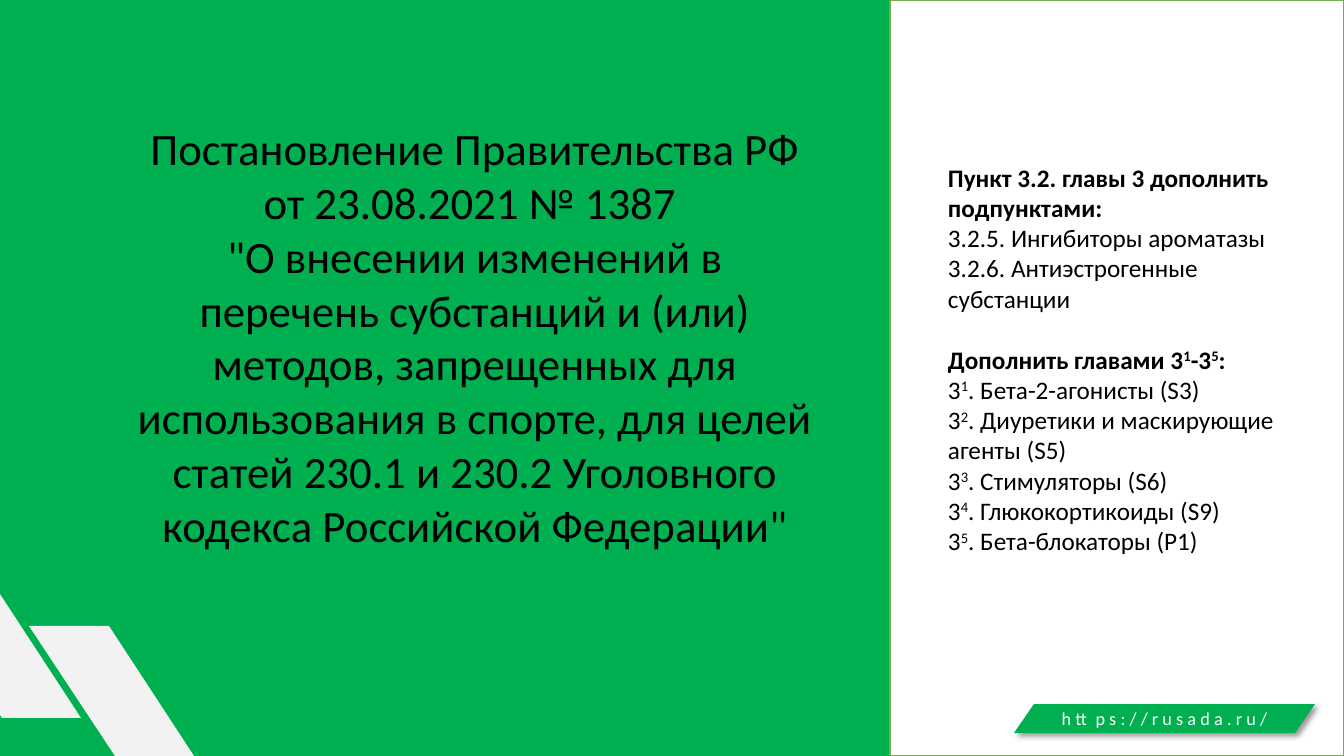
from pptx import Presentation
from pptx.dml.color import RGBColor
from pptx.enum.shapes import MSO_SHAPE as Shape
from pptx.enum.text import MSO_ANCHOR as Anchor, MSO_AUTO_SIZE as Fit, PP_ALIGN as Align
from pptx.oxml import parse_xml
from pptx.oxml.ns import nsdecls
from pptx.util import Pt

# Content: ^ switches superscript on and off
TITLE = [
    "Постановление Правительства РФ от 23.08.2021 № 1387 ",
    '"О внесении изменений в перечень субстанций и (или) методов, запрещенных для '
    'использования в спорте, для целей статей 230.1 и 230.2 Уголовного кодекса '
    'Российской Федерации"',
]
GROUPS = [
    ("Пункт 3.2. главы 3 дополнить подпунктами:", [
        "3.2.5. Ингибиторы ароматазы",
        "3.2.6. Антиэстрогенные субстанции",
    ]),
    ("Дополнить главами 3^1^-3^5^:", [
        "3^1^. Бета-2-агонисты (S3)",
        "3^2^. Диуретики и маскирующие агенты (S5)",
        "3^3^. Стимуляторы (S6)",
        "3^4^. Глюкокортикоиды (S9)",
        "3^5^. Бета-блокаторы (P1)",
    ]),
]
SITE = "https://rusada.ru/"

# Geometry in px
WIDE, HIGH = 1344, 756
TITLE_BOX = (129, 116, 692, 445)
PANEL_BOX = (890, 0, 454, 756)
LIST_BOX = (943, 157, 361, 407)
SITE_BOX = (1052, 704, 225, 28)
STRIPE = [(194, 756), (109, 626), (29, 626), (115, 756)]
SHIFTS = [(0, 0), (-113, -38)]
TAG = [(1014, 733), (1034, 704), (1315, 704), (1295, 733)]
SCALE = 914400 / 100.8

GREEN = RGBColor(0x00, 0xB0, 0x50)
EDGE = RGBColor(0x70, 0xAD, 0x47)
PALE = RGBColor(0xF2, 0xF2, 0xF2)
WHITE = RGBColor(0xFF, 0xFF, 0xFF)
BLACK = RGBColor(0, 0, 0)


def px(n):
    return round(n * SCALE)


def place(shape, box):
    for name, n in zip(("left", "top", "width", "height"), box):
        setattr(shape, name, px(n))


def setup(shape, anchor=Anchor.TOP):
    frame = shape.text_frame
    form = dict(word_wrap=True, auto_size=Fit.SHAPE_TO_FIT_TEXT, vertical_anchor=anchor)
    for side in ("left", "right", "top", "bottom"):
        form["margin_" + side] = px(5)
    for name, value in form.items():
        setattr(frame, name, value)
    return frame


def write(frame, lines, size, color=BLACK, align=Align.LEFT, space=0):
    """Fill a frame from (text, bold, gap before) lines."""
    for i, (text, bold, gap) in enumerate(lines):
        para = frame.add_paragraph() if i else frame.paragraphs[0]
        props = para._p.get_or_add_pPr()
        props.set("marL", "0")
        props.set("indent", "0")
        props.append(parse_xml(f"<a:buNone {nsdecls('a')}/>"))
        form = dict(alignment=align, space_before=Pt(gap), space_after=Pt(0), line_spacing=1.0)
        for name, value in form.items():
            setattr(para, name, value)
        for j, part in enumerate(text.split("^")):
            run = para.add_run()
            run.text = part
            for name, value in dict(name="Calibri", size=Pt(size), bold=bold).items():
                setattr(run.font, name, value)
            run.font.color.rgb = color
            marks = run._r.get_or_add_rPr()
            if j % 2:
                marks.set("baseline", "30000")
            if space:
                marks.set("spc", str(space * 100))


def paint(shape, fill, line=None):
    shape.shadow.inherit = False
    shape.fill.solid()
    shape.fill.fore_color.rgb = fill
    if line is None:
        shape.line.fill.background()
    else:
        shape.line.color.rgb = line
        shape.line.width = Pt(1)


def outline(slide, points, fill):
    form = slide.shapes.build_freeform(*points[0], scale=SCALE)
    form.add_line_segments(points[1:], close=True)
    shape = form.convert_to_shape()
    paint(shape, fill)
    return shape


def main():
    deck = Presentation()
    deck.slide_width, deck.slide_height = px(WIDE), px(HIGH)
    slide = deck.slides.add_slide(deck.slide_layouts[1])
    slide.background.fill.solid()
    slide.background.fill.fore_color.rgb = GREEN

    # Title on the green side
    title, body = slide.shapes.title, slide.placeholders[1]
    place(title, TITLE_BOX)
    write(setup(title), [(text, False, 0) for text in TITLE], 32, align=Align.CENTER)

    # Corner stripes
    for dx, dy in SHIFTS:
        outline(slide, [(x + dx, y + dy) for x, y in STRIPE], PALE)

    # White panel with the list above it
    panel = slide.shapes.add_shape(Shape.RECTANGLE, *map(px, PANEL_BOX))
    paint(panel, WHITE, EDGE)
    panel.element.addnext(body.element)
    place(body, LIST_BOX)
    lines = []
    for head, items in GROUPS:
        lines.append((head, True, 22 if lines else 0))
        lines += [(item, False, 0) for item in items]
    write(setup(body), lines, 18)

    # Site tag with a soft shadow
    tag = outline(slide, TAG, GREEN)
    effects = tag.element.spPr.find("{*}effectLst")
    effects.append(parse_xml(
        f'<a:outerShdw {nsdecls("a")} blurRad="{Pt(4)}" dist="{Pt(3)}" dir="2700000" '
        'algn="tl" rotWithShape="0"><a:srgbClr val="000000"><a:alpha val="40000"/>'
        '</a:srgbClr></a:outerShdw>'))
    site = slide.shapes.add_textbox(*map(px, SITE_BOX))
    write(setup(site, Anchor.MIDDLE), [(SITE, False, 0)], 13, WHITE, Align.CENTER, space=3)

    deck.save("out.pptx")


if __name__ == "__main__":
    main()
